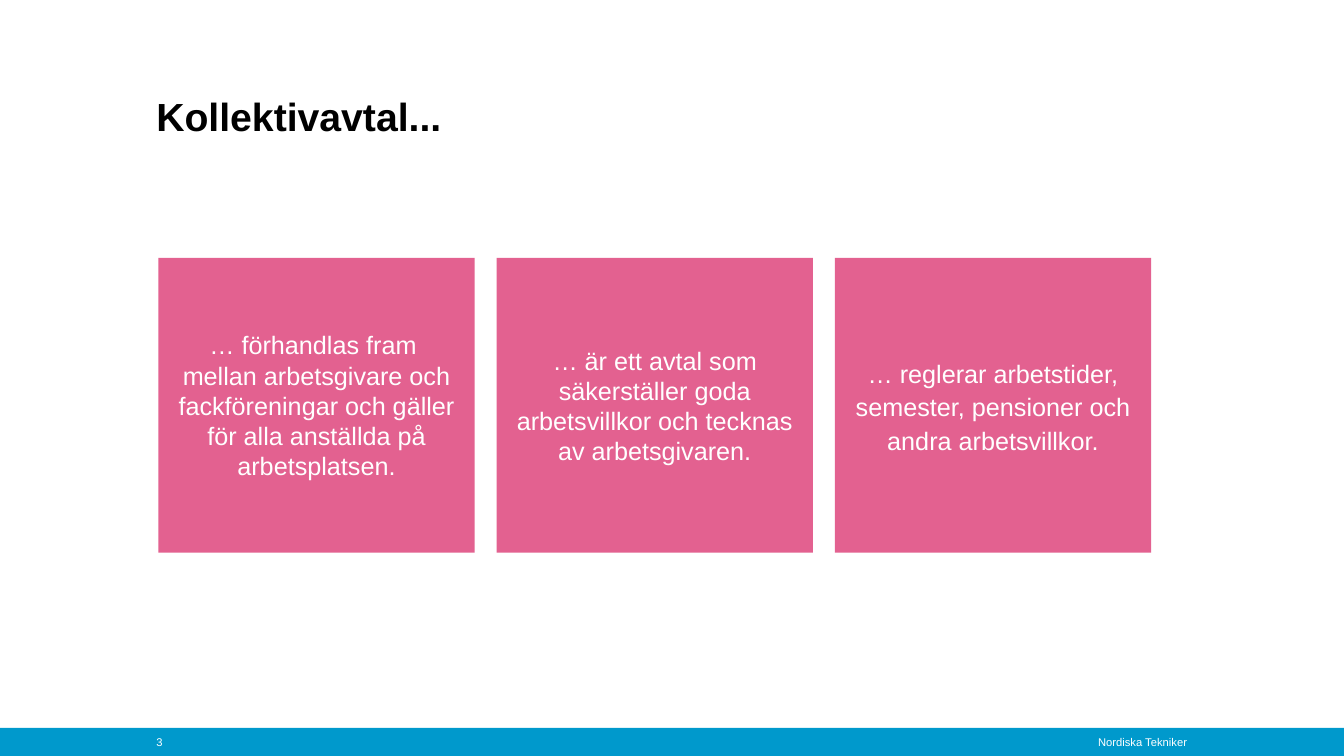
import pptx
import pptx.util
import pptx.dml.color
import pptx.enum.shapes
import pptx.enum.text

Cm = pptx.util.Cm
Pt = pptx.util.Pt
ALIGN = pptx.enum.text.PP_ALIGN
ANCHOR = pptx.enum.text.MSO_ANCHOR

COLOURS = {"band": "0099CC", "card": "E36190", "light": "FFFFFF", "title": "000000"}
CARDS = [
    ("… förhandlas fram \nmellan arbetsgivare och fackföreningar och gäller "
     "för alla anställda på arbetsplatsen.", 1.0, 0),
    ("… är ett avtal som säkerställer goda arbetsvillkor och tecknas av arbetsgivaren.", 1.0, 0),
    ("… reglerar arbetstider, semester, pensioner och andra arbetsvillkor.", 1.1, 7.5),
]


def colour(name):
    return pptx.dml.color.RGBColor.from_string(COLOURS[name])


def add_block(page, left, top, width, height, fill):
    block = page.shapes.add_shape(
        pptx.enum.shapes.MSO_SHAPE.RECTANGLE, Cm(left), Cm(top), Cm(width), Cm(height))
    block.shadow.inherit = False
    block.fill.solid()
    block.fill.fore_color.rgb = colour(fill)
    block.line.fill.background()
    return block


def write(frame, text, size, ink, align=ALIGN.LEFT, anchor=ANCHOR.TOP, bold=False):
    frame.word_wrap = True
    frame.vertical_anchor = anchor
    para = frame.paragraphs[0]
    para.text = text
    para.alignment = align
    para.font.name = "Arial"
    para.font.size = Pt(size)
    para.font.bold = bold
    para.font.color.rgb = colour(ink)
    return para


def add_label(page, left, top, width, height, text, size, ink, **style):
    box = page.shapes.add_textbox(Cm(left), Cm(top), Cm(width), Cm(height))
    frame = box.text_frame
    frame.margin_left = frame.margin_right = frame.margin_top = frame.margin_bottom = 0
    return write(frame, text, size, ink, **style)


def draw_footer(page, left, top, width, height):
    add_block(page, left, top, width, height, "band")
    add_label(page, left + 3.94, top + 0.2, 1.5, 0.33, "3", 8, "light", anchor=ANCHOR.MIDDLE)
    add_label(page, left + 26.92, top + 0.18, 3, 0.33, "Nordiska Tekniker", 8, "light",
              align=ALIGN.RIGHT)


def draw_title(page, left, top, width, height):
    para = add_label(page, left, top, width, height, "Kollektivavtal...", 28, "title", bold=True)
    para.line_spacing = 1.1


def draw_cards(page, left, top, width, height, gap=0.55):
    card_width = (width - gap * (len(CARDS) - 1)) / len(CARDS)
    for index, (text, line_spacing, space) in enumerate(CARDS):
        card = add_block(page, left + index * (card_width + gap), top, card_width, height, "card")
        para = write(card.text_frame, text, 18, "light", align=ALIGN.CENTER, anchor=ANCHOR.MIDDLE)
        para.line_spacing = line_spacing
        para.space_before = para.space_after = Pt(space)


def main():
    deck = pptx.Presentation()
    deck.slide_width, deck.slide_height = Cm(33.87), Cm(19.05)
    page = deck.slides.add_slide(deck.slide_layouts[6])
    draw_footer(page, 0, 18.34, 33.87, 0.71)
    draw_title(page, 3.94, 2.21, 26, 2.39)
    draw_cards(page, 3.99, 6.5, 25.02, 7.43)
    deck.save("out.pptx")


if __name__ == "__main__":
    main()
